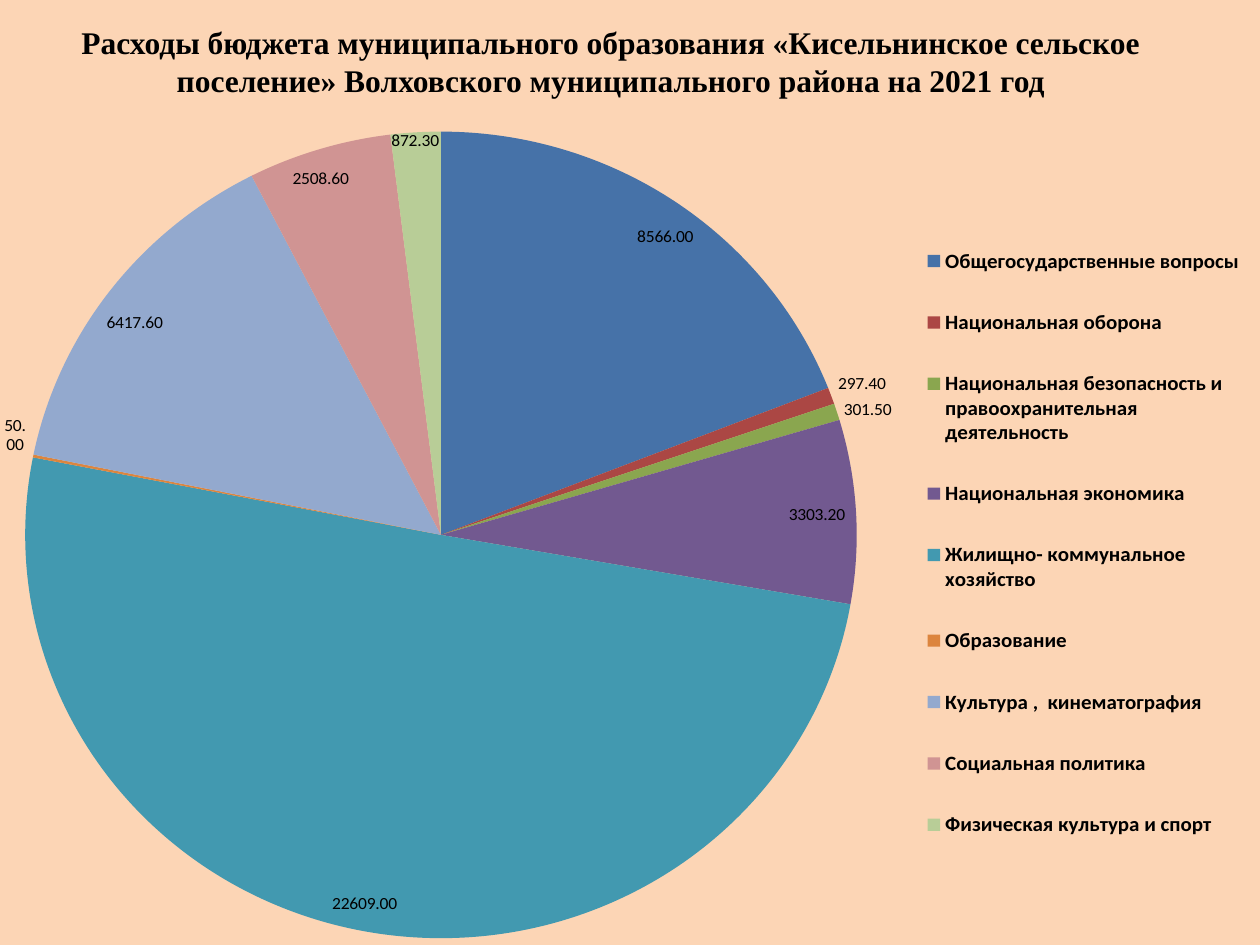
"""Build the slide with the 2021 municipal budget expenditure pie."""
import pptx
import pptx.chart.data
import pptx.dml.color
import pptx.enum.chart
import pptx.enum.text
import pptx.oxml
import pptx.oxml.ns
import pptx.util

PX = 914400 // 126
SLIDE_SIZE = (1260, 945)
TITLE_BOX = (44, 16, 1134, 90)
PIE_BOX = (0, 106, 1260, 833)
PIE_AREA = {"x": 0.02, "y": 0, "w": 0.66, "h": 1}
LEGEND_AREA = {"x": 0.73, "y": 0.1, "w": 0.26, "h": 0.82}
BACKGROUND = "FCD5B5"
BLACK = "000000"
TITLE = ("Расходы бюджета муниципального образования «Кисельнинское сельское "
         "поселение» Волховского муниципального района на 2021 год")
EXPENSES = [
    ("Общегосударственные вопросы", 8566, "4672A8"),
    ("Национальная оборона", 297.4, "AB4744"),
    ("Национальная безопасность и правоохранительная деятельность", 301.5, "8AA64F"),
    ("Национальная экономика", 3303.2, "725990"),
    ("Жилищно- коммунальное хозяйство", 22609, "4299B0"),
    ("Образование", 50, "DC853E"),
    ("Культура ,  кинематография", 6417.6, "93A9CE"),
    ("Социальная политика", 2508.6, "D09493"),
    ("Физическая культура и спорт", 872.3, "B8CD97"),
]


def emu(lengths):
    return [length * PX for length in lengths]


def rgb(value):
    return pptx.dml.color.RGBColor.from_string(value)


def style(font, name, size, bold=False):
    font.name = name
    font.size = pptx.util.Pt(size)
    font.bold = bold
    font.color.rgb = rgb(BLACK)


def manual_layout(area, inner=False):
    target = '<c:layoutTarget val="inner"/>' if inner else ""
    modes = "".join(f'<c:{side}Mode val="edge"/>' for side in "xy")
    places = "".join(f'<c:{key} val="{value}"/>' for key, value in area.items())
    return pptx.oxml.parse_xml(
        f'<c:layout {pptx.oxml.ns.nsdecls("c")}><c:manualLayout>'
        f"{target}{modes}{places}</c:manualLayout></c:layout>")


def add_title(slide):
    frame = slide.shapes.add_textbox(*emu(TITLE_BOX)).text_frame
    frame.word_wrap = True
    frame.vertical_anchor = pptx.enum.text.MSO_ANCHOR.MIDDLE
    paragraph = frame.paragraphs[0]
    paragraph.alignment = pptx.enum.text.PP_ALIGN.CENTER
    run = paragraph.add_run()
    run.text = TITLE
    style(run.font, "Times New Roman", 18, True)


def add_pie(slide):
    names, amounts, colors = zip(*EXPENSES)
    budget = pptx.chart.data.CategoryChartData(number_format="0.00")
    budget.categories = names
    budget.add_series("Series 1", amounts)
    pie = slide.shapes.add_chart(
        pptx.enum.chart.XL_CHART_TYPE.PIE, *emu(PIE_BOX), budget).chart
    pie.has_title = False
    style(pie.font, "Calibri", 10)

    pie.has_legend = True
    legend = pie.legend
    legend.position = pptx.enum.chart.XL_LEGEND_POSITION.RIGHT
    legend.include_in_layout = False
    style(legend.font, "Calibri", 12, True)
    position = legend._element.find(pptx.oxml.ns.qn("c:legendPos"))
    position.addnext(manual_layout(LEGEND_AREA))

    plot = pie.plots[0]
    plot.vary_by_categories = True
    plot_area = plot._element.getparent()
    for layout in plot_area.findall(pptx.oxml.ns.qn("c:layout")):
        plot_area.remove(layout)
    plot_area.insert(0, manual_layout(PIE_AREA, inner=True))
    expenses = plot.series[0]
    for index, color in enumerate(colors):
        fill = expenses.points[index].format.fill
        fill.solid()
        fill.fore_color.rgb = rgb(color)
    labels = expenses.data_labels
    labels.show_value = True
    labels.number_format = "0.00"
    labels.number_format_is_linked = False
    labels.position = pptx.enum.chart.XL_LABEL_POSITION.BEST_FIT
    style(labels.font, "Calibri", 10)


def main():
    deck = pptx.Presentation()
    deck.slide_width, deck.slide_height = emu(SLIDE_SIZE)
    slide = deck.slides.add_slide(deck.slide_layouts[6])
    slide.background.fill.solid()
    slide.background.fill.fore_color.rgb = rgb(BACKGROUND)
    add_title(slide)
    add_pie(slide)
    deck.save("out.pptx")


if __name__ == "__main__":
    main()
